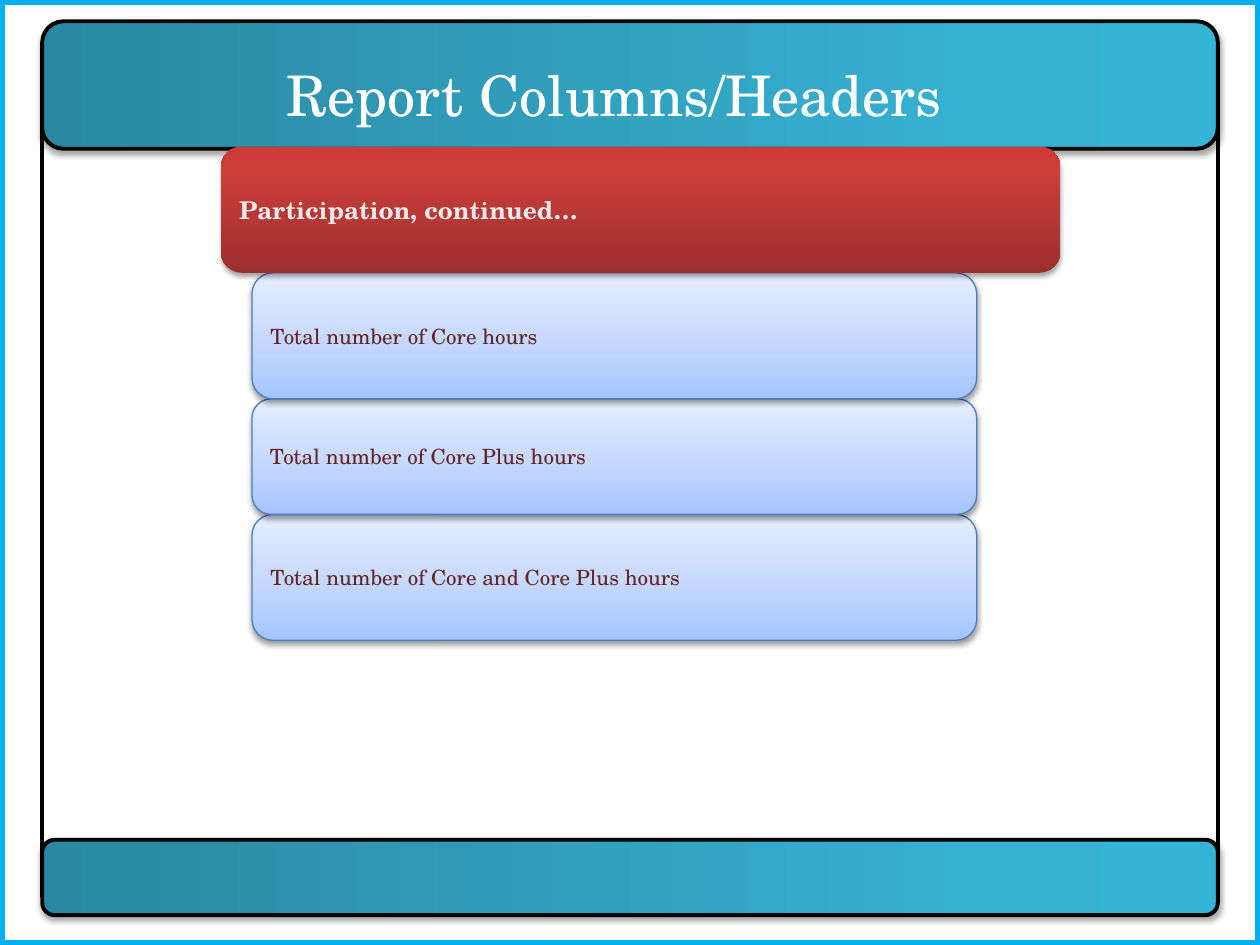
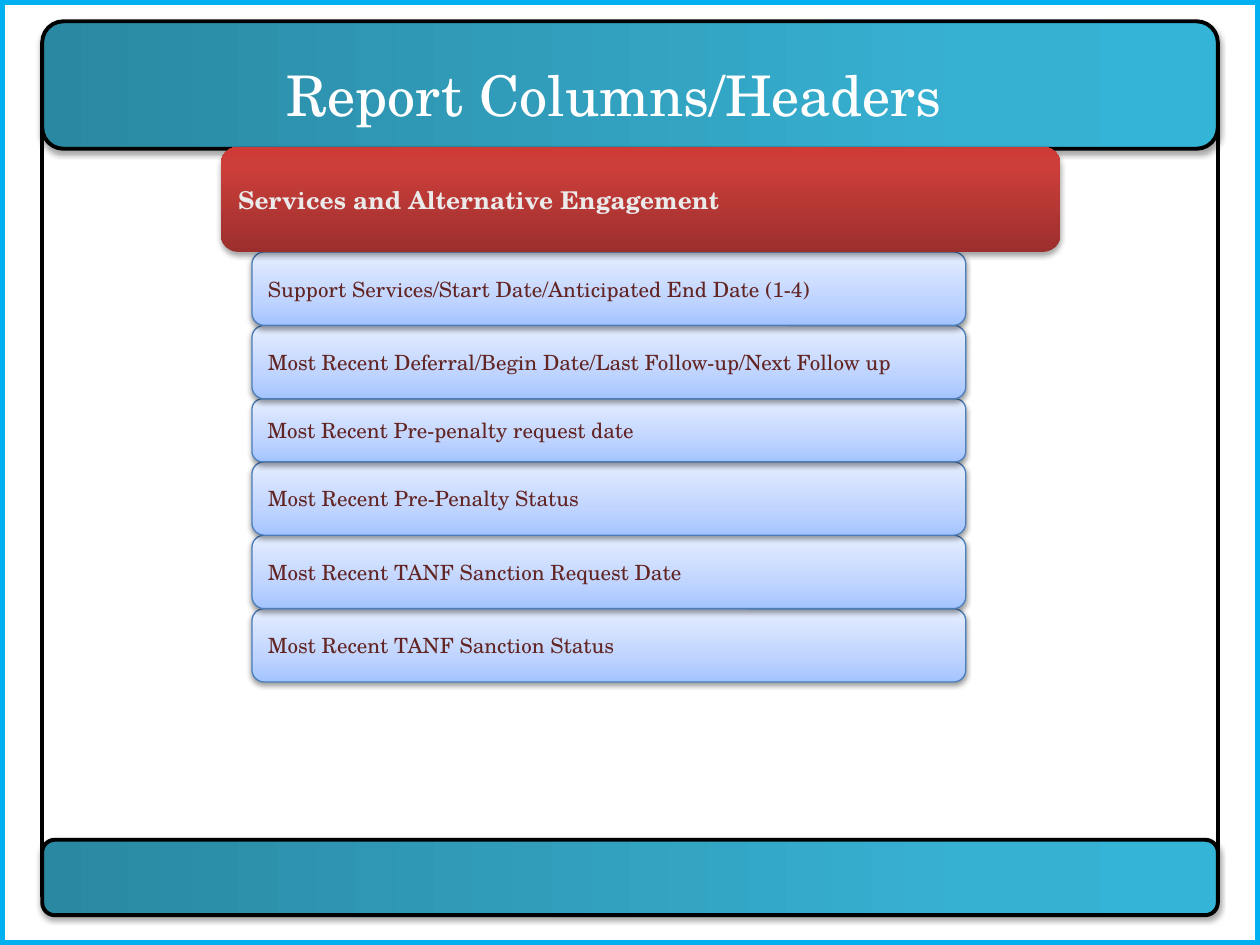
import lxml.etree
import pptx
import pptx.dml.color
import pptx.enum.shapes
import pptx.enum.text
import pptx.oxml.ns
import pptx.util

RGBColor = pptx.dml.color.RGBColor
Cm = pptx.util.Cm
Pt = pptx.util.Pt
qn = pptx.oxml.ns.qn
MSO_SHAPE = pptx.enum.shapes.MSO_SHAPE
PP_ALIGN = pptx.enum.text.PP_ALIGN

WHITE = RGBColor(0xFF, 0xFF, 0xFF)
BLACK = RGBColor(0x00, 0x00, 0x00)
SKY = RGBColor(0x00, 0xB0, 0xF0)
ROW_LINE = RGBColor(0x4B, 0x7E, 0xBC)
MAROON = RGBColor(0x63, 0x25, 0x23)
PALE_GREY = RGBColor(0xEA, 0xEA, 0xEA)
TEAL = [(0, RGBColor(0x2A, 0x88, 0xA2)), (80, RGBColor(0x37, 0xB1, 0xD2)),
        (100, RGBColor(0x34, 0xB4, 0xD6))]
RED = [(0, RGBColor(0x9C, 0x2F, 0x2D)), (80, RGBColor(0xCB, 0x3E, 0x3A)),
       (100, RGBColor(0xCE, 0x3B, 0x37))]
BLUE = [(0, RGBColor(0xA4, 0xC4, 0xFF)), (35, RGBColor(0xBF, 0xD4, 0xFF)),
        (100, RGBColor(0xE6, 0xEE, 0xFF))]

FONT = "TeX Gyre Schola"
WIDTH, HEIGHT = 25.4, 19.05
FRAME_WIDTH = 23.7
HEADING_TOP = 2.96

SLIDES = [
    ("Participation, continued…", 2.54, 14.61, [
        ("Total number of Core hours", 2.54),
        ("Total number of Core Plus hours", 2.33),
        ("Total number of Core and Core Plus hours", 2.54),
    ]),
    ("Services and Alternative Engagement", 2.12, 14.39, [
        ("Support Services/Start Date/Anticipated End Date (1-4)", 1.48),
        ("Most Recent Deferral/Begin Date/Last Follow-up/Next Follow up", 1.48),
        ("Most Recent Pre-penalty request date", 1.27),
        ("Most Recent Pre-Penalty Status", 1.48),
        ("Most Recent TANF Sanction Request Date", 1.48),
        ("Most Recent TANF Sanction Status", 1.48),
    ]),
]


class Deck:
    """Hold the presentation style and draw elements on the current slide."""

    def __init__(self):
        self.prs = pptx.Presentation()
        self.prs.slide_width = Cm(WIDTH)
        self.prs.slide_height = Cm(HEIGHT)
        self.s = None

    def new_slide(self):
        """Start a slide with the shared border, frame and bands."""
        self.s = self.prs.slides.add_slide(self.prs.slide_layouts[6])
        self.shape(MSO_SHAPE.RECTANGLE, 0, 0, WIDTH, HEIGHT, WHITE, SKY, 6)
        self.shape(MSO_SHAPE.FLOWCHART_PROCESS, (WIDTH - FRAME_WIDTH) / 2, 1.27,
                   FRAME_WIDTH, 16.09, WHITE, BLACK, 2.25)
        self.band(0.43, 2.57)
        self.band(16.93, 1.52)

    def shape(self, kind, left, top, width, height, fill=None, line=None, weight=0.75):
        """Add a preset shape with a solid, gradient or empty fill."""
        sp = self.s.shapes.add_shape(kind, Cm(left), Cm(top), Cm(width), Cm(height))
        sp.shadow.inherit = False
        if fill is None:
            sp.fill.background()
        elif isinstance(fill, list):
            self.gradient(sp, fill)
        else:
            sp.fill.solid()
            sp.fill.fore_color.rgb = fill
        if line is None:
            sp.line.fill.background()
        else:
            sp.line.color.rgb = line
            sp.line.width = Pt(weight)
        return sp

    def gradient(self, sp, stops):
        """Fill a shape with colour stops running from bottom to top."""
        sp.fill.gradient()
        sp.fill.gradient_angle = 90
        gs_list = sp._element.spPr.find(".//" + qn("a:gsLst"))
        gs_list.clear()
        for position, color in stops:
            gs = lxml.etree.SubElement(gs_list, qn("a:gs"), pos=str(position * 1000))
            lxml.etree.SubElement(gs, qn("a:srgbClr"), val=str(color))

    def shadow(self, sp, distance, opacity):
        """Give a shape a soft black shadow below it."""
        effects = sp._element.spPr.find(qn("a:effectLst"))
        outer = lxml.etree.SubElement(
            effects, qn("a:outerShdw"), blurRad=str(Pt(3.1)), dist=str(Pt(distance)),
            dir="5400000", rotWithShape="0")
        color = lxml.etree.SubElement(outer, qn("a:srgbClr"), val=str(BLACK))
        lxml.etree.SubElement(color, qn("a:alpha"), val=str(opacity * 1000))

    def text(self, sp, text, size, color, bold=False, align=PP_ALIGN.LEFT):
        """Write one formatted paragraph in a shape."""
        tf = sp.text_frame
        tf.word_wrap = True
        tf.vertical_anchor = pptx.enum.text.MSO_ANCHOR.MIDDLE
        tf.text = text
        p = tf.paragraphs[0]
        p.alignment = align
        r = p.runs[0]
        r.font.name = FONT
        r.font.size = Pt(size)
        r.font.bold = bold
        r.font.color.rgb = color

    def band(self, top, height):
        """Add a horizontal teal band, turned so its gradient runs sideways."""
        sp = self.shape(MSO_SHAPE.FLOWCHART_ALTERNATE_PROCESS, (WIDTH - height) / 2,
                        top + (height - FRAME_WIDTH) / 2, height, FRAME_WIDTH,
                        TEAL, BLACK, 2.25)
        sp.rotation = 90
        self.shadow(sp, 1.8, 35)

    def title(self, text):
        """Add the slide title over the top band."""
        sp = self.shape(MSO_SHAPE.ROUNDED_RECTANGLE, 4.45, 1.27, 15.88, 1.27)
        self.text(sp, text, 32, WHITE, align=PP_ALIGN.CENTER)

    def heading(self, text, height):
        """Add the red section heading."""
        sp = self.shape(MSO_SHAPE.FLOWCHART_ALTERNATE_PROCESS, 4.45, HEADING_TOP,
                        16.93, height, RED)
        self.shadow(sp, 1.8, 35)
        self.text(sp, text, 14, PALE_GREY, bold=True)

    def rows(self, top, width, rows):
        """Stack blue rows, each one lying over the row below it."""
        bottom = top + sum(height for _, height in rows)
        for text, height in reversed(rows):
            bottom -= height
            sp = self.shape(MSO_SHAPE.ROUNDED_RECTANGLE, 5.08, bottom, width, height,
                            BLUE, ROW_LINE)
            self.shadow(sp, 1.6, 38)
            self.text(sp, text, 12, MAROON)


def main():
    """Build and save the deck."""
    deck = Deck()
    for heading, heading_height, row_width, rows in SLIDES:
        deck.new_slide()
        deck.rows(HEADING_TOP + heading_height, row_width, rows)
        deck.heading(heading, heading_height)
        deck.title("Report Columns/Headers")
    deck.prs.save("out.pptx")


if __name__ == "__main__":
    main()
